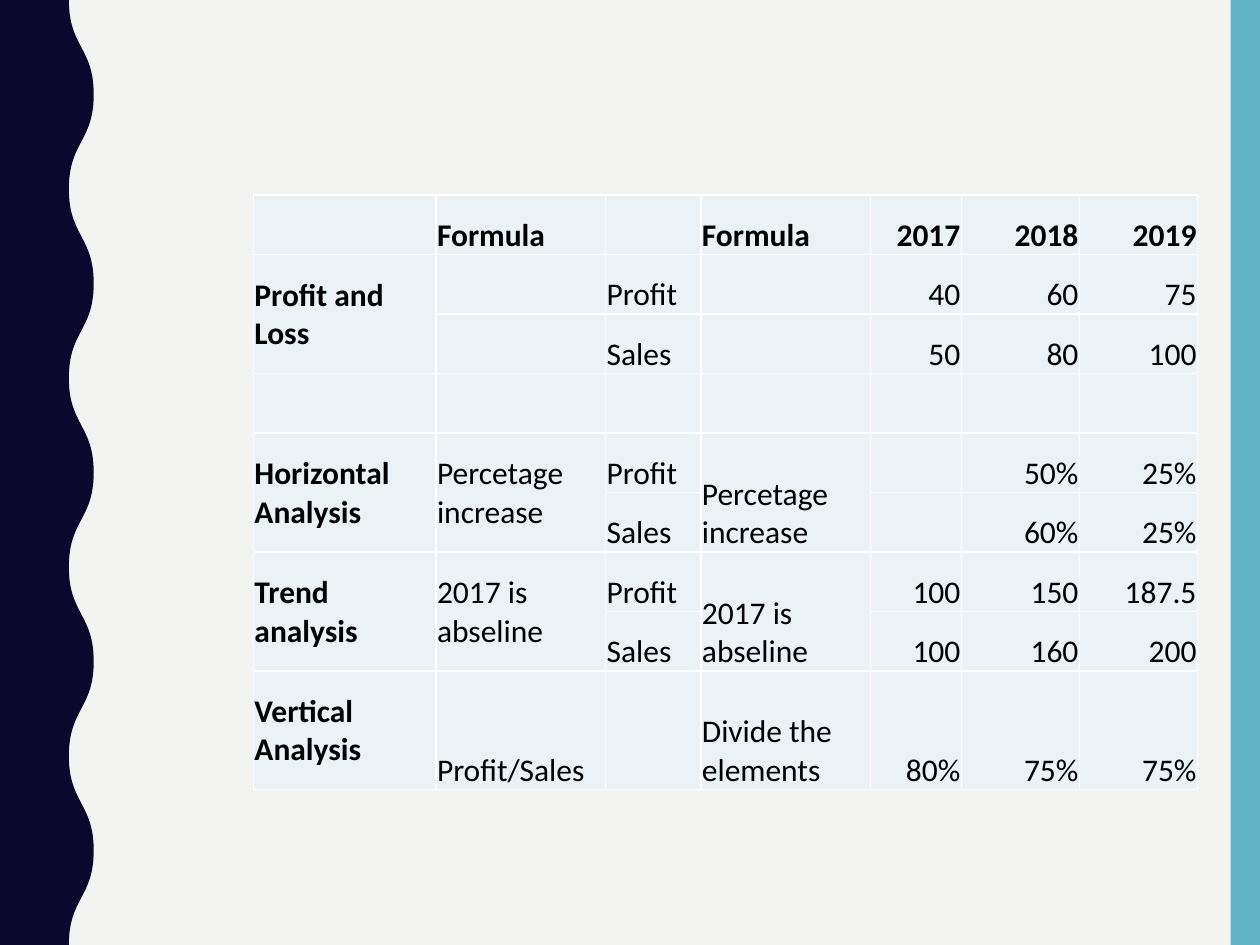
from lxml import etree
from pptx import Presentation
from pptx.dml.color import RGBColor
from pptx.enum.shapes import MSO_SHAPE
from pptx.enum.text import MSO_ANCHOR, PP_ALIGN
from pptx.oxml.ns import qn
from pptx.util import Cm, Pt

RECTANGLE = MSO_SHAPE.RECTANGLE
MIDDLE, BOTTOM = MSO_ANCHOR.MIDDLE, MSO_ANCHOR.BOTTOM
LEFT, RIGHT = PP_ALIGN.LEFT, PP_ALIGN.RIGHT

COLORS = {
    "background": "F3F3F2",
    "wave": "0B082E",
    "stripe": "62B4C6",
    "cell": "EAF2F5",
    "border": "FFFFFF",
    "text": "000000",
}
FONT = "Calibri"
WIDTH, HEIGHT = 25.4, 19.05

COLUMN_WIDTHS = [3.68, 3.42, 1.92, 3.42, 1.83, 2.38, 2.38]
ROW_HEIGHTS = [1.2] * 8 + [2.39]
FIRST_YEAR_COLUMN = 4
ROWS = [
    ["", "Formula", "", "Formula", "2017", "2018", "2019"],
    ["Profit and Loss", "", "Profit", "", "40", "60", "75"],
    ["", "", "Sales", "", "50", "80", "100"],
    [""] * 7,
    ["Horizontal Analysis", "Percetage increase", "Profit", "Percetage increase", "", "50%", "25%"],
    ["", "", "Sales", "", "", "60%", "25%"],
    ["Trend analysis", "2017 is abseline", "Profit", "2017 is abseline", "100", "150", "187.5"],
    ["", "", "Sales", "", "100", "160", "200"],
    ["Vertical Analysis", "Profit/Sales", "", "Divide the elements", "80%", "75%", "75%"],
]
# Row and column of the upper cell of each two-row merge
MERGES = [(1, 0), (4, 0), (4, 1), (4, 3), (6, 0), (6, 1), (6, 3)]


def rgb(name):
    return RGBColor.from_string(COLORS[name])


def style_shape(shape, color):
    shape.shadow.inherit = False
    shape.fill.solid()
    shape.fill.fore_color.rgb = rgb(color)
    shape.line.fill.background()


def add_stripe(slide):
    left = 24.81
    stripe = slide.shapes.add_shape(RECTANGLE, Cm(left), 0, Cm(WIDTH - left), Cm(HEIGHT))
    style_shape(stripe, "stripe")


def bend_segment(segment, start, end):
    """Turn a straight path segment into an S-curve with upright ends."""
    middle = (start[1] + end[1]) // 2
    segment.tag = qn("a:cubicBezTo")
    for point in list(segment):
        segment.remove(point)
    for x, y in ((start[0], middle), (end[0], middle), end):
        etree.SubElement(segment, qn("a:pt"), x=str(x), y=str(y))


def add_wave(slide):
    trough, crest, half_waves = 1.39, 1.89, 10
    edge = [
        (Cm(crest if index % 2 else trough), Cm(HEIGHT * index / half_waves))
        for index in range(half_waves + 1)
    ]
    builder = slide.shapes.build_freeform(0, 0)
    builder.add_line_segments([*edge, (0, Cm(HEIGHT))], close=True)
    wave = builder.convert_to_shape()
    style_shape(wave, "wave")
    segments = list(wave.element.iter(qn("a:lnTo")))[1:half_waves + 1]
    for segment, start, end in zip(segments, edge, edge[1:]):
        bend_segment(segment, start, end)


def set_borders(cell):
    properties = cell._tc.get_or_add_tcPr()
    for side in ("a:lnL", "a:lnR", "a:lnT", "a:lnB"):
        line = etree.SubElement(properties, qn(side), w=str(Pt(1)))
        fill = etree.SubElement(line, qn("a:solidFill"))
        etree.SubElement(fill, qn("a:srgbClr"), val=COLORS["border"])


def style_cell(cell, anchor):
    set_borders(cell)
    cell.fill.solid()
    cell.fill.fore_color.rgb = rgb("cell")
    cell.margin_left = cell.margin_right = cell.margin_top = Cm(0.02)
    cell.margin_bottom = 0
    cell.vertical_anchor = anchor


def write_cell(cell, text, bold, alignment):
    paragraph = cell.text_frame.paragraphs[0]
    paragraph.alignment = alignment
    run = paragraph.add_run()
    run.text = text
    run.font.name = FONT
    run.font.size = Pt(18)
    run.font.bold = bold
    run.font.color.rgb = rgb("text")


def add_analysis_table(slide):
    frame = slide.shapes.add_table(
        len(ROW_HEIGHTS), len(COLUMN_WIDTHS), Cm(5.11), Cm(3.93),
        Cm(sum(COLUMN_WIDTHS)), Cm(sum(ROW_HEIGHTS)))
    table = frame.table
    table.first_row = table.horz_banding = False
    for column, width in zip(table.columns, COLUMN_WIDTHS):
        column.width = Cm(width)
    for row, height in zip(table.rows, ROW_HEIGHTS):
        row.height = Cm(height)

    for row_index, texts in enumerate(ROWS):
        for column_index, text in enumerate(texts):
            cell = table.cell(row_index, column_index)
            merged_formula = column_index == 1 and (row_index, 1) in MERGES
            centred = column_index == 0 or merged_formula
            style_cell(cell, MIDDLE if centred else BOTTOM)
            if text:
                bold = row_index == 0 or column_index == 0
                alignment = RIGHT if column_index >= FIRST_YEAR_COLUMN else LEFT
                write_cell(cell, text, bold, alignment)

    for row_index, column_index in MERGES:
        table.cell(row_index, column_index).merge(table.cell(row_index + 1, column_index))


def main():
    presentation = Presentation()
    presentation.slide_width, presentation.slide_height = Cm(WIDTH), Cm(HEIGHT)
    blank_layout = presentation.slide_layouts[6]
    slide = presentation.slides.add_slide(blank_layout)
    slide.background.fill.solid()
    slide.background.fill.fore_color.rgb = rgb("background")
    add_stripe(slide)
    add_wave(slide)
    add_analysis_table(slide)
    presentation.save("out.pptx")


if __name__ == "__main__":
    main()
